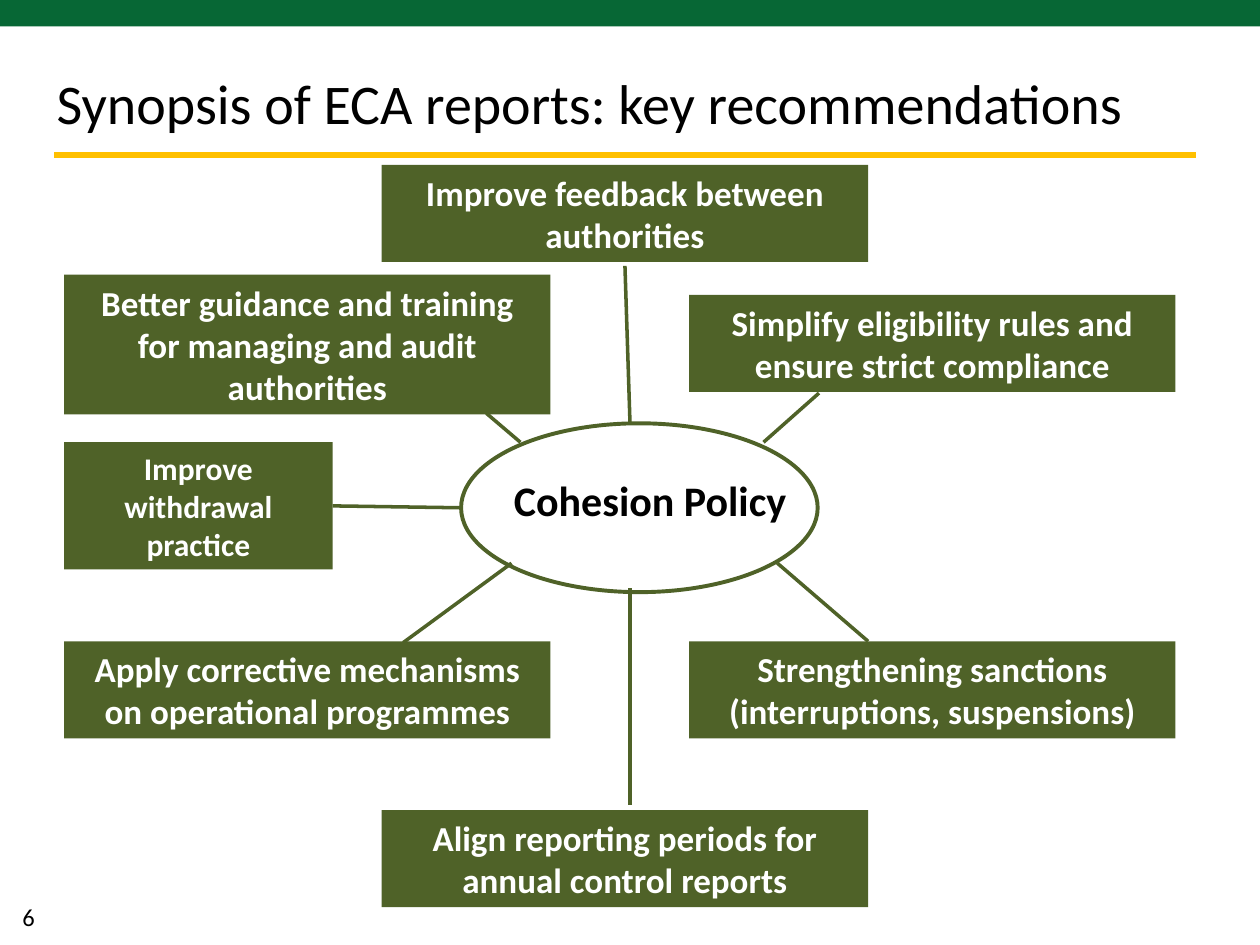
import pptx
import pptx.dml.color
import pptx.enum.shapes
import pptx.enum.text
import pptx.oxml.ns
import pptx.util
from lxml import etree
from pptx.util import Inches

RGBColor = pptx.dml.color.RGBColor
MSO_SHAPE = pptx.enum.shapes.MSO_SHAPE
PP_ALIGN = pptx.enum.text.PP_ALIGN
MSO_ANCHOR = pptx.enum.text.MSO_ANCHOR

BLACK = RGBColor(0x00, 0x00, 0x00)
WHITE = RGBColor(0xFF, 0xFF, 0xFF)
BANNER_GREEN = RGBColor(0x07, 0x67, 0x35)
OLIVE = RGBColor(0x4F, 0x62, 0x28)
GOLD = RGBColor(0xFF, 0xC0, 0x00)

LEFT, MIDDLE, RIGHT = 0.51, 3.03, 5.47
WIDE, TWO_LINES, THREE_LINES = 3.86, 0.77, 1.11
LOWER_ROW = 5.09
RIGHT_SIDE = 3

# text, left, top, width, height, font size
RECOMMENDATIONS = [
    ("Improve feedback between authorities", MIDDLE, 1.31, WIDE, TWO_LINES, 20),
    ("Simplify eligibility rules and ensure strict compliance",
     RIGHT, 2.34, WIDE, TWO_LINES, 20),
    ("Strengthening sanctions (interruptions, suspensions)",
     RIGHT, LOWER_ROW, WIDE, TWO_LINES, 20),
    ("Align reporting periods for annual control reports",
     MIDDLE, 6.43, WIDE, TWO_LINES, 20),
    ("Apply corrective mechanisms on operational programmes",
     LEFT, LOWER_ROW, WIDE, TWO_LINES, 20),
    ("Better guidance and training for managing and audit authorities",
     LEFT, 2.18, WIDE, THREE_LINES, 20),
]

# from the central ellipse to a recommendation
SPOKES = [
    ((5, 3.36), (4.96, 2.11)),
    ((6.06, 3.51), (6.5, 3.12)),
    ((6.17, 4.47), (6.89, 5.09)),
    ((5, 4.67), (5, 6.39)),
    ((4.06, 4.47), (3.2, 5.1)),
    ((4.13, 3.51), (3.86, 3.28)),
]


def write_text(shape, text, *, size, color=BLACK, bold=False,
               align=PP_ALIGN.LEFT, anchor=MSO_ANCHOR.TOP, font="Calibri"):
    frame = shape.text_frame
    frame.word_wrap = True
    frame.vertical_anchor = anchor
    paragraph = frame.paragraphs[0]
    paragraph.alignment = align
    run = paragraph.add_run()
    run.text = text
    run.font.name = font
    run.font.size = pptx.util.Pt(size)
    run.font.bold = bold
    run.font.color.rgb = color


class SlideBuilder:
    def __init__(self, slide):
        self.slide = slide
        self.accent = OLIVE

    def text_box(self, text, left, top, width, height, **text_format):
        box = self.slide.shapes.add_textbox(
            Inches(left), Inches(top), Inches(width), Inches(height))
        write_text(box, text, **text_format)
        return box

    def shape(self, kind, left, top, width, height, fill=None, line=None):
        shape = self.slide.shapes.add_shape(
            kind, Inches(left), Inches(top), Inches(width), Inches(height))
        shape.shadow.inherit = False
        if fill is None:
            shape.fill.background()
        else:
            shape.fill.solid()
            shape.fill.fore_color.rgb = fill
        if line is None:
            shape.line.fill.background()
        else:
            shape.line.color.rgb = line
            shape.line.width = pptx.util.Pt(2.25)
        return shape

    def recommendation(self, text, left, top, width, height, size):
        box = self.shape(MSO_SHAPE.RECTANGLE, left, top, width, height, fill=self.accent)
        write_text(box, text, size=size, color=WHITE, bold=True,
                   align=PP_ALIGN.CENTER, anchor=MSO_ANCHOR.MIDDLE)
        return box

    def line(self, start, end, color=None, width=2):
        connector = self.slide.shapes.add_connector(
            pptx.enum.shapes.MSO_CONNECTOR.STRAIGHT,
            *(Inches(value) for value in (*start, *end)))
        connector.line.color.rgb = color or self.accent
        connector.line.width = pptx.util.Pt(width)
        etree.SubElement(connector._element.spPr, pptx.oxml.ns.qn("a:effectLst"))
        return connector


def main():
    presentation = pptx.Presentation()
    presentation.slide_width = Inches(10)
    presentation.slide_height = Inches(7.5)
    builder = SlideBuilder(
        presentation.slides.add_slide(presentation.slide_layouts[6]))

    builder.line((0.43, 1.23), (9.49, 1.23), color=GOLD, width=3)
    builder.shape(MSO_SHAPE.RECTANGLE, 0, 0, 10, 0.21, fill=BANNER_GREEN)
    builder.text_box("6", 0.08, 7.11, 0.98, 0.34, size=14)
    builder.text_box("Synopsis of ECA reports: key recommendations",
                     0.35, 0.36, 9.15, 0.77, size=32, anchor=MSO_ANCHOR.BOTTOM)

    builder.text_box("Cohesion Policy", 3.9, 3.72, 2.52, 0.5,
                     size=24, bold=True, align=PP_ALIGN.CENTER)
    builder.shape(MSO_SHAPE.OVAL, 3.66, 3.36, 2.83, 1.34, line=OLIVE)

    for recommendation in RECOMMENDATIONS:
        builder.recommendation(*recommendation)
    for start, end in SPOKES:
        builder.line(start, end)

    withdrawal = builder.recommendation(
        "Improve withdrawal practice", LEFT, 3.51, 2.13, 1.01, 18)
    withdrawal_spoke = builder.line((3.66, 4.03), (2.64, 4.03))
    withdrawal_spoke.end_connect(withdrawal, RIGHT_SIDE)

    presentation.save("out.pptx")


if __name__ == "__main__":
    main()
